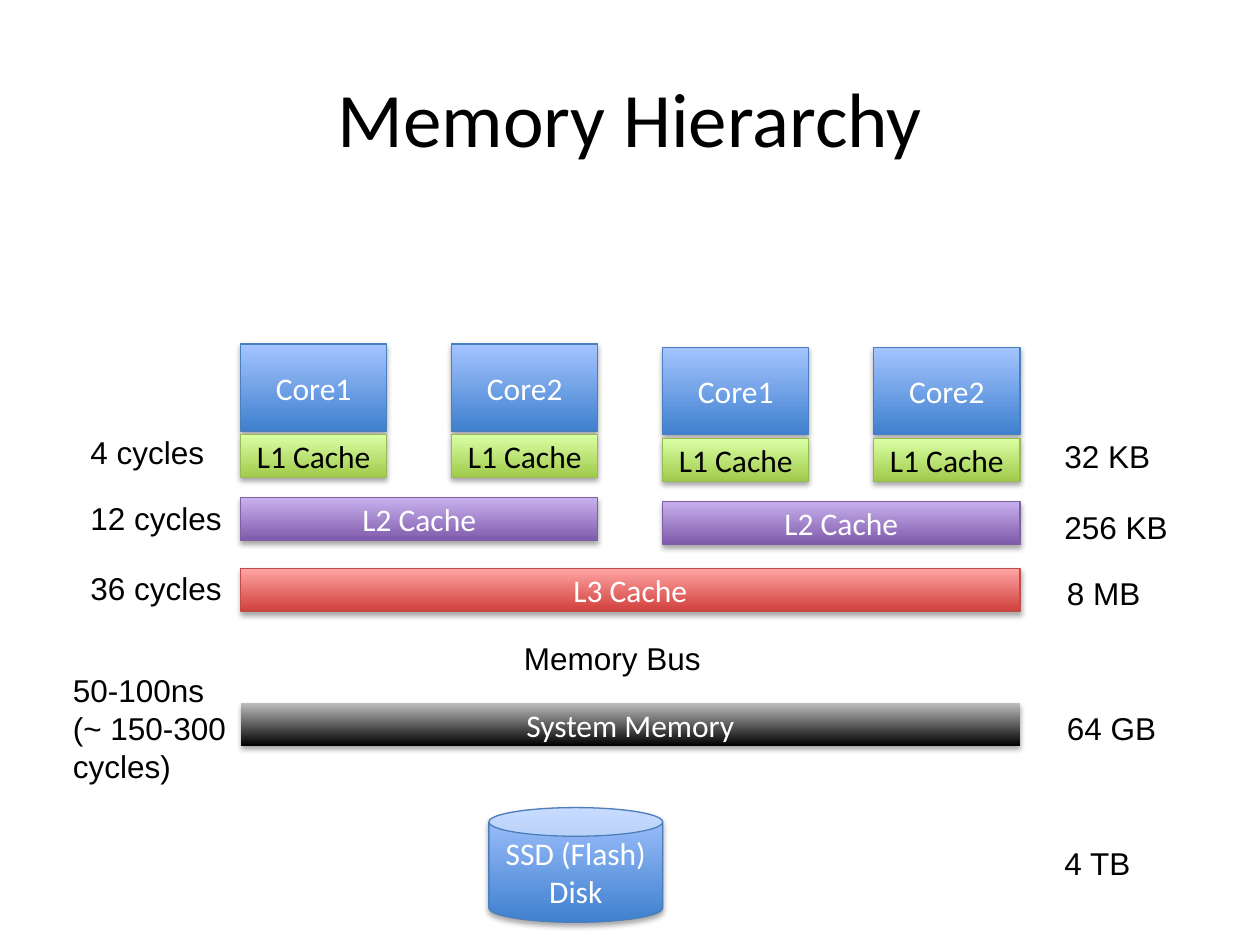
from dataclasses import dataclass
from typing import Optional

from lxml.etree import SubElement
from pptx import Presentation
from pptx.dml.color import RGBColor
from pptx.enum.shapes import MSO_SHAPE
from pptx.enum.text import MSO_ANCHOR, MSO_AUTO_SIZE, PP_ALIGN
from pptx.oxml.ns import qn
from pptx.util import Inches, Pt


@dataclass(frozen=True)
class Paint:
    bottom: str
    top: str
    line: Optional[str]
    text: str = "FFFFFF"


@dataclass(frozen=True)
class Theme:
    core: Paint = Paint("3F80CE", "A4C4FF", "4B7EBC")
    l1: Paint = Paint("A0CA4A", "DAFFA5", "98B955", "000000")
    l2: Paint = Paint("7F5BAB", "C8B0ED", "7D60A0")
    l3: Paint = Paint("D1403C", "FFA6A5", "BF4C48")
    memory: Paint = Paint("000000", "BDBDBD", None)
    ink: str = "000000"
    block_font: str = "Calibri"
    label_font: str = "Arial"
    title_size: int = 44
    body_size: int = 18


@dataclass(frozen=True)
class Box:
    left: float
    top: float
    width: float
    height: float

    def emu(self) -> list:
        return [Inches(v) for v in (self.left, self.top, self.width, self.height)]


@dataclass(frozen=True)
class Label:
    text: str
    left: float
    top: float
    width: float = 1.54
    height: float = 0.4


THEME = Theme()

# Grid: four core columns, two per socket
GRID_LEFT, PITCH, CORE_W = 1.91, 1.675, 1.16
CORE_H, BAR_H = 0.69, 0.34
CORE_TOP, L1_TOP, L2_TOP, L3_TOP, MEMORY_TOP = 2.73, 3.45, 3.95, 4.51, 5.58
SOCKET_DROP = 0.03  # the second socket sits slightly lower

LATENCY_LEFT, SIZE_LEFT = 0.62, 8.35
LABELS = [
    Label("Memory Bus", 4.06, 5.02, 1.87),
    Label("32 KB", SIZE_LEFT, 3.42),
    Label("256 KB", SIZE_LEFT, 3.98),
    Label("8 MB", SIZE_LEFT + 0.02, L3_TOP),
    Label("64 GB", SIZE_LEFT + 0.02, MEMORY_TOP),
    Label("4 TB", SIZE_LEFT, 6.65),
    Label("4 cycles", LATENCY_LEFT, 3.39),
    Label("12 cycles", LATENCY_LEFT, 3.91),
    Label("36 cycles", LATENCY_LEFT, 4.47),
    Label("50-100ns\n(~ 150-300 cycles)", 0.48, 5.28, height=1.01),
]


def rgb(value: str) -> RGBColor:
    return RGBColor.from_string(value)


def span(column: int, columns: int, top: float, height: float) -> Box:
    """Box covering a number of core columns."""
    return Box(GRID_LEFT + column * PITCH, top, (columns - 1) * PITCH + CORE_W, height)


def write(tf, text: str, font: str, size: int, color: str, align: PP_ALIGN) -> None:
    tf.text = text
    tf.word_wrap = True
    for p in tf.paragraphs:
        p.alignment = align
        p.font.name, p.font.size = font, Pt(size)
        p.font.color.rgb = rgb(color)


def add_shadow(sp) -> None:
    sp.shadow.inherit = False
    effects = sp._element.spPr.find(qn("a:effectLst"))
    outer = SubElement(effects, qn("a:outerShdw"), blurRad="40000", dist="23000",
                       dir="5400000", rotWithShape="0")
    color = SubElement(outer, qn("a:srgbClr"), val="000000")
    SubElement(color, qn("a:alpha"), val="35000")


def add_block(s, text: str, box: Box, paint: Paint,
              kind: MSO_SHAPE = MSO_SHAPE.RECTANGLE) -> None:
    sp = s.shapes.add_shape(kind, *box.emu())
    sp.fill.gradient()
    sp.fill.gradient_angle = 90
    for stop, color in zip(sp.fill.gradient_stops, (paint.bottom, paint.top)):
        stop.color.rgb = rgb(color)
    if paint.line:
        sp.line.color.rgb = rgb(paint.line)
        sp.line.width = Pt(0.75)
    else:
        sp.line.fill.background()
    add_shadow(sp)
    sp.text_frame.vertical_anchor = MSO_ANCHOR.MIDDLE
    write(sp.text_frame, text, THEME.block_font, THEME.body_size, paint.text,
          PP_ALIGN.CENTER)


def add_label(s, label: Label) -> None:
    box = Box(label.left, label.top, label.width, label.height)
    tf = s.shapes.add_textbox(*box.emu()).text_frame
    write(tf, label.text, THEME.label_font, THEME.body_size, THEME.ink, PP_ALIGN.LEFT)
    tf.auto_size = MSO_AUTO_SIZE.SHAPE_TO_FIT_TEXT


def add_socket(s, socket: int) -> None:
    """Two cores with their L1 caches above a shared L2 cache."""
    first, drop = socket * 2, socket * SOCKET_DROP
    for core in range(2):
        column = first + core
        add_block(s, f"Core{core + 1}", span(column, 1, CORE_TOP + drop, CORE_H), THEME.core)
        add_block(s, "L1 Cache", span(column, 1, L1_TOP + drop, BAR_H), THEME.l1)
    add_block(s, "L2 Cache", span(first, 2, L2_TOP + drop, BAR_H), THEME.l2)


def main() -> None:
    prs = Presentation()
    prs.slide_width, prs.slide_height = Inches(10), Inches(7.5)
    s = prs.slides.add_slide(prs.slide_layouts[5])

    # Title
    title = s.shapes.title
    title.left, title.top, title.width, title.height = Box(0.5, 0.3, 9, 1.25).emu()
    title.text_frame.vertical_anchor = MSO_ANCHOR.MIDDLE
    write(title.text_frame, "Memory Hierarchy", THEME.block_font, THEME.title_size,
          THEME.ink, PP_ALIGN.CENTER)

    # Sockets, shared levels and disk
    for socket in range(2):
        add_socket(s, socket)
    add_block(s, "L3 Cache", span(0, 4, L3_TOP, BAR_H), THEME.l3)
    add_block(s, "System Memory", span(0, 4, MEMORY_TOP, BAR_H), THEME.memory)
    add_block(s, "SSD (Flash) Disk", Box(3.88, 6.41, 1.38, 0.91), THEME.core, MSO_SHAPE.CAN)

    # Latencies and capacities
    for label in LABELS:
        add_label(s, label)

    prs.save("out.pptx")


if __name__ == "__main__":
    main()
